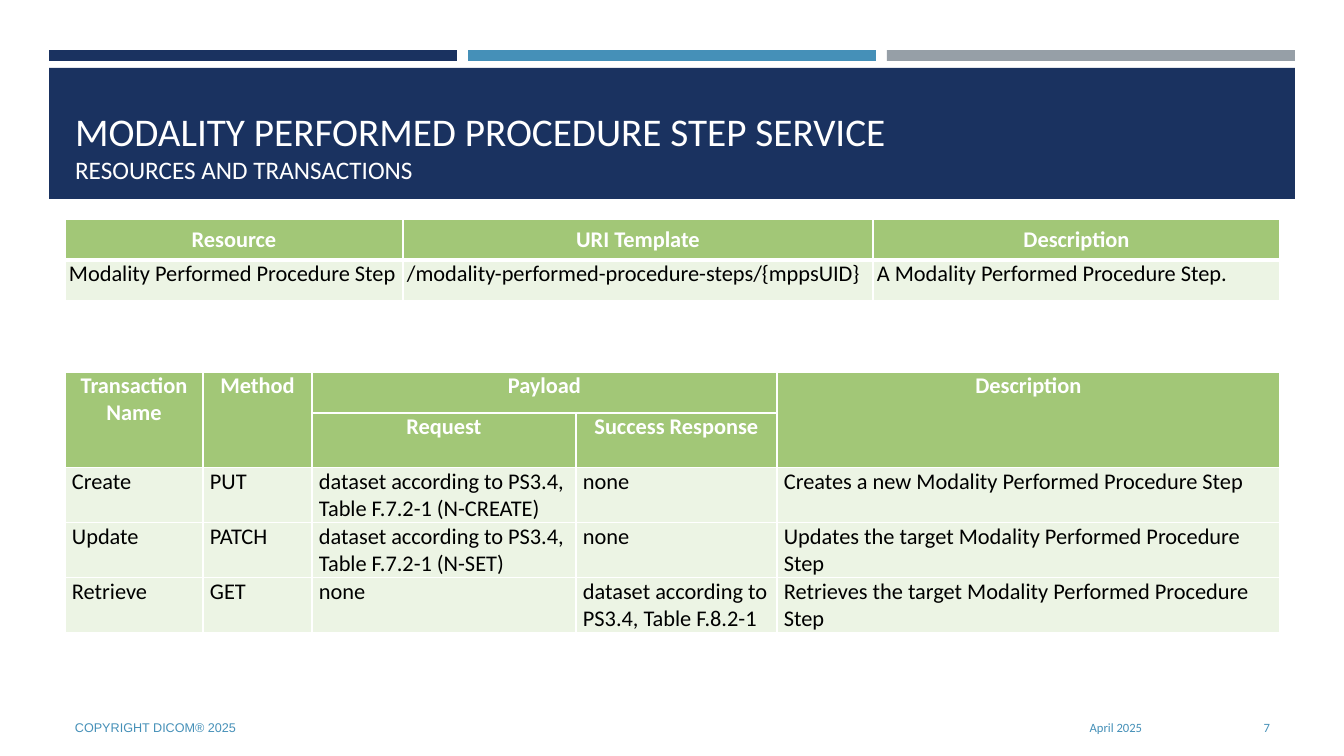
import pptx
import pptx.util
import pptx.dml.color
import pptx.enum.shapes
import pptx.enum.text
import pptx.oxml
import pptx.oxml.ns
from dataclasses import dataclass

ANCHOR = pptx.enum.text.MSO_ANCHOR
ALIGN = pptx.enum.text.PP_ALIGN


@dataclass(frozen=True)
class Theme:
    navy: str = "1A3260"
    blue: str = "4590B8"
    grey: str = "969FA7"
    green: str = "A2C777"
    pale: str = "ECF4E4"
    white: str = "FFFFFF"
    black: str = "000000"
    font: str = "Calibri"
    footer_font: str = "Arial"
    title: int = 28
    subtitle: int = 18
    table: int = 16
    footer: int = 9


THEME = Theme()

RESOURCES = [
    ["Resource", "URI Template", "Description"],
    ["Modality Performed Procedure Step",
     "/modality-performed-procedure-steps/{mppsUID}",
     "A Modality Performed Procedure Step."],
]
TRANSACTIONS = [
    ["Transaction Name", "Method", "Payload", "", "Description"],
    ["", "", "Request", "Success Response", ""],
    ["Create", "PUT", "dataset according to PS3.4, Table F.7.2-1 (N-CREATE)",
     "none", "Creates a new Modality Performed Procedure Step"],
    ["Update", "PATCH", "dataset according to PS3.4, Table F.7.2-1 (N-SET)",
     "none", "Updates the target Modality Performed Procedure Step"],
    ["Retrieve", "GET", "none", "dataset according to PS3.4, Table F.8.2-1",
     "Retrieves the target Modality Performed Procedure Step"],
]


def px(n):
    """Turn pixels (100.8 to the inch) into EMU."""
    return pptx.util.Emu(round(n * 914400 / 100.8))


def rgb(color):
    return pptx.dml.color.RGBColor.from_string(color)


def add_run(p, text, size, color, font=THEME.font, bold=False):
    r = p.add_run()
    r.text = text
    r.font.size = pptx.util.Pt(size)
    r.font.name = font
    r.font.bold = bold
    r.font.color.rgb = rgb(color)


def add_bar(slide, x, y, w, h, color):
    sp = slide.shapes.add_shape(pptx.enum.shapes.MSO_SHAPE.RECTANGLE,
                                px(x), px(y), px(w), px(h))
    sp.shadow.inherit = False
    sp.fill.solid()
    sp.fill.fore_color.rgb = rgb(color)
    sp.line.fill.background()


def set_title(slide, x, y, w, h, title, subtitle):
    sp = slide.shapes.title
    sp.left, sp.top, sp.width, sp.height = px(x), px(y), px(w), px(h)
    tf = sp.text_frame
    tf.auto_size = pptx.enum.text.MSO_AUTO_SIZE.NONE
    tf.word_wrap = True
    tf.vertical_anchor = ANCHOR.BOTTOM
    p = tf.paragraphs[0]
    p.alignment = ALIGN.LEFT
    add_run(p, title, THEME.title, THEME.white)
    p.add_line_break()
    add_run(p, subtitle, THEME.subtitle, THEME.white)


def add_footer(slide, x, w, text, align, font=THEME.font):
    sp = slide.shapes.add_textbox(px(x), px(708), px(w), px(40))
    tf = sp.text_frame
    tf.word_wrap = True
    tf.vertical_anchor = ANCHOR.MIDDLE
    p = tf.paragraphs[0]
    p.alignment = align
    add_run(p, text, THEME.footer, THEME.blue, font)


def set_borders(cell, bottom):
    tc_pr = cell._tc.get_or_add_tcPr()
    for side, width in (("L", 1), ("R", 1), ("T", 1), ("B", bottom)):
        tc_pr.append(pptx.oxml.parse_xml(
            f'<a:ln{side} {pptx.oxml.ns.nsdecls("a")} w="{pptx.util.Pt(width)}">'
            f'<a:solidFill><a:srgbClr val="{THEME.white}"/></a:solidFill>'
            f'</a:ln{side}>'))


def fill_cell(cell, text, header, inset, anchor, bottom):
    set_borders(cell, bottom)
    cell.fill.solid()
    cell.fill.fore_color.rgb = rgb(THEME.green if header else THEME.pale)
    cell.margin_left = cell.margin_right = px(inset)
    cell.margin_top = cell.margin_bottom = 0
    cell.vertical_anchor = anchor
    p = cell.text_frame.paragraphs[0]
    p.alignment = ALIGN.CENTER if header else ALIGN.LEFT
    if text:
        add_run(p, text, THEME.table, THEME.white if header else THEME.black,
                bold=header)


def add_table(slide, x, y, widths, heights, rows, header_rows, inset,
              header_anchor=ANCHOR.TOP, header_rule=1, merges=()):
    frame = slide.shapes.add_table(len(rows), len(widths), px(x), px(y),
                                   px(sum(widths)), px(sum(heights)))
    table = frame.table
    table.horz_banding = False
    for column, width in zip(table.columns, widths):
        column.width = px(width)
    for i, (row, height) in enumerate(zip(rows, heights)):
        table.rows[i].height = px(height)
        header = i < header_rows
        for j, text in enumerate(row):
            fill_cell(table.cell(i, j), text, header, inset,
                      header_anchor if header else ANCHOR.TOP,
                      header_rule if header else 1)
    for first, last in merges:
        table.cell(*first).merge(table.cell(*last))


def main():
    prs = pptx.Presentation()
    prs.slide_width, prs.slide_height = px(1344), px(756)
    slide = prs.slides.add_slide(prs.slide_layouts[5])

    # Accent bars and title band
    for i, color in enumerate((THEME.navy, THEME.blue, THEME.grey)):
        add_bar(slide, 49 + 419 * i, 50, 408, 11, color)
    add_bar(slide, 49, 68, 1246, 131, THEME.navy)

    # Title, brought in front of the band
    set_title(slide, 65, 78, 1215, 112,
              "MODALITY PERFORMED PROCEDURE STEP SERVICE",
              "RESOURCES AND TRANSACTIONS")
    slide.shapes._spTree.append(slide.shapes.title._element)

    # Resources
    add_table(slide, 65, 219, (338, 470, 407), (41, 41), RESOURCES,
              header_rows=1, inset=4, header_anchor=ANCHOR.MIDDLE,
              header_rule=3)

    # Transactions
    add_table(slide, 65, 372, (138, 109, 264, 201, 503), (41, 54, 55, 55, 55),
              TRANSACTIONS, header_rows=2, inset=7,
              merges=(((0, 0), (1, 0)), ((0, 1), (1, 1)),
                      ((0, 2), (0, 3)), ((0, 4), (1, 4))))

    # Footer
    add_footer(slide, 65, 762, "COPYRIGHT DICOM® 2025", ALIGN.LEFT,
               THEME.footer_font)
    add_footer(slide, 839, 313, "April 2025", ALIGN.RIGHT)
    add_footer(slide, 1164, 116, "7", ALIGN.RIGHT)

    prs.save("out.pptx")


if __name__ == "__main__":
    main()
